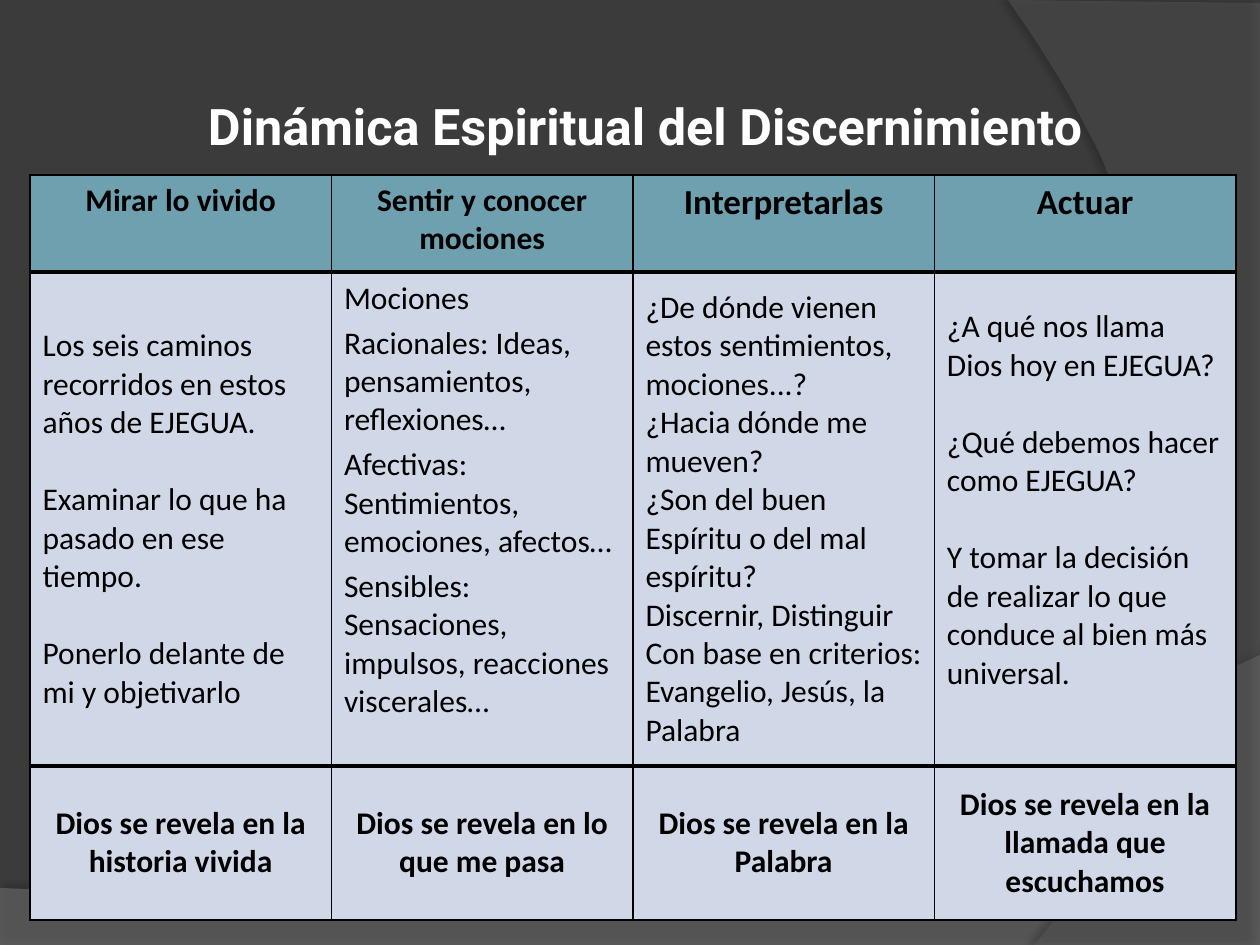
from lxml.etree import SubElement
from pptx import Presentation
from pptx.dml.color import RGBColor
from pptx.enum.text import MSO_ANCHOR as Anchor, PP_ALIGN as Align
from pptx.oxml import parse_xml
from pptx.oxml.ns import nsdecls, qn
from pptx.util import Pt

PX = 914400 / 126  # EMU per px


def px(*lengths):
    return [round(n * PX) for n in lengths]


def color(hex_string):
    return RGBColor.from_string(hex_string)


deck = Presentation()
deck.slide_width, deck.slide_height = px(1260, 945)
slide = deck.slides.add_slide(deck.slide_layouts[5])
slide.background.fill.solid()
slide.background.fill.fore_color.rgb = color("3B3B3B")

# Translucent background sweeps: corners before the curve, Bezier curve,
# fill, opacity %, shadow opacity %, distance in points, direction in degrees
sweeps = [
    ([(0, 888), (0, 945), (1260, 945)],
     [(1260, 655), (704, 919), (493, 906), (0, 888)], "7F7F7F", 45, 35, 3.5, 270),
    ([(1260, 3), (1260, 945)],
     [(1034, 945), (1178, 780), (1283, 378), (1008, 0)], "5E5E5E", 40, 45, 4, 180),
]
STEPS = 60
for corners, (a, b, c, d), fill, opacity, shade, distance, direction in sweeps:
    curve = []
    for step in range(STEPS + 1):
        t = step / STEPS
        weights = ((1 - t) ** 3, 3 * t * (1 - t) ** 2, 3 * t * t * (1 - t), t ** 3)
        curve.append(tuple(sum(w * p[axis] for w, p in zip(weights, (a, b, c, d)))
                           for axis in (0, 1)))
    outline = slide.shapes.build_freeform(*corners[0], scale=PX)
    outline.add_line_segments(corners[1:] + curve, close=True)
    sweep = outline.convert_to_shape()
    sweep.fill.solid()
    sweep.fill.fore_color.rgb = color(fill)
    sweep.line.fill.background()
    tint = sweep.element.spPr.find(f"{qn('a:solidFill')}/{qn('a:srgbClr')}")
    SubElement(tint, qn("a:alpha"), val=str(opacity * 1000))
    sweep.element.spPr.append(parse_xml(
        f'<a:effectLst {nsdecls("a")}><a:outerShdw blurRad="{Pt(4)}" '
        f'dist="{Pt(distance)}" dir="{direction * 60000}" rotWithShape="0">'
        f'<a:srgbClr val="000000"><a:alpha val="{shade * 1000}"/></a:srgbClr>'
        '</a:outerShdw></a:effectLst>'))

# Title, in front of the sweeps
title = slide.shapes.title
title.element.getparent().append(title.element)
title.left, title.top, title.width, title.height = px(202, 86, 904, 79)
frame = title.text_frame
frame.text = "Dinámica Espiritual del Discernimiento"
frame.vertical_anchor = Anchor.MIDDLE
frame.margin_left, frame.margin_right, frame.margin_top, frame.margin_bottom = px(6, 6, 6, 6)
heading = frame.paragraphs[0]
heading.alignment = Align.LEFT
heading.font.name, heading.font.size, heading.font.bold = "Roboto", Pt(28.8), True
heading.font.color.rgb = color("FFFFFF")

# Table content
stages = ["Mirar lo vivido", "Sentir y conocer mociones", "Interpretarlas", "Actuar"]
steps = [
    ["Los seis caminos recorridos en estos años de EJEGUA.",
     "Examinar lo que ha pasado en ese tiempo.",
     "Ponerlo delante de mi y objetivarlo"],
    ["Mociones",
     "Racionales: Ideas, pensamientos, reflexiones…",
     "Afectivas: Sentimientos, emociones, afectos…",
     "Sensibles: Sensaciones, impulsos, reacciones viscerales…"],
    ["¿De dónde vienen estos sentimientos, mociones...?",
     "¿Hacia dónde me mueven?",
     "¿Son del buen Espíritu o del mal espíritu?",
     "Discernir, Distinguir",
     "Con base en criterios: Evangelio, Jesús, la Palabra"],
    ["¿A qué nos llama Dios hoy en EJEGUA?",
     "¿Qué debemos hacer como EJEGUA?",
     "Y tomar la decisión de realizar lo que conduce al bien más universal."],
]
revelations = ["Dios se revela en la historia vivida", "Dios se revela en lo que me pasa",
               "Dios se revela en la Palabra", "Dios se revela en la llamada que escuchamos"]
rows = [[[text] for text in stages], steps, [[text] for text in revelations]]
step_gaps = [22, 3.6, 0, 22]      # points between paragraphs, by column
step_bottoms = [6, 44, 6, 44]     # bottom margins, by column
row_heights = px(97, 494, 154)

# Table
table = slide.shapes.add_table(3, 4, *px(30, 175, 1206, 745)).table
table.first_row = table.horz_banding = False
for r, row in enumerate(rows):
    table.rows[r].height = row_heights[r]
    for c, lines in enumerate(row):
        cell = table.cell(r, c)
        is_header, is_steps = r == 0, r == 1
        # Borders: thick between rows, thin elsewhere
        edges = {"L": 1, "R": 1, "T": 1 if is_header else 3, "B": 1 if r == 2 else 3}
        for edge, width in edges.items():
            cell._tc.get_or_add_tcPr().append(parse_xml(
                f'<a:ln{edge} {nsdecls("a")} w="{Pt(width)}"><a:solidFill>'
                f'<a:srgbClr val="000000"/></a:solidFill></a:ln{edge}>'))
        cell.fill.solid()
        cell.fill.fore_color.rgb = color("6EA0B0" if is_header else "D0D8E8")
        cell.vertical_anchor = Anchor.TOP if is_header else Anchor.MIDDLE
        if is_steps:
            cell.margin_bottom = px(step_bottoms[c])[0]
        cell.text = "\n".join(lines)
        for i, paragraph in enumerate(cell.text_frame.paragraphs):
            paragraph.alignment = Align.LEFT if is_steps else Align.CENTER
            if i:
                paragraph.space_before = Pt(step_gaps[c])
            font = paragraph.font
            font.name, font.bold = "Calibri", not is_steps
            font.size = Pt(20 if is_header and c > 1 else 18)
            font.color.rgb = color("000000")

deck.save("out.pptx")
